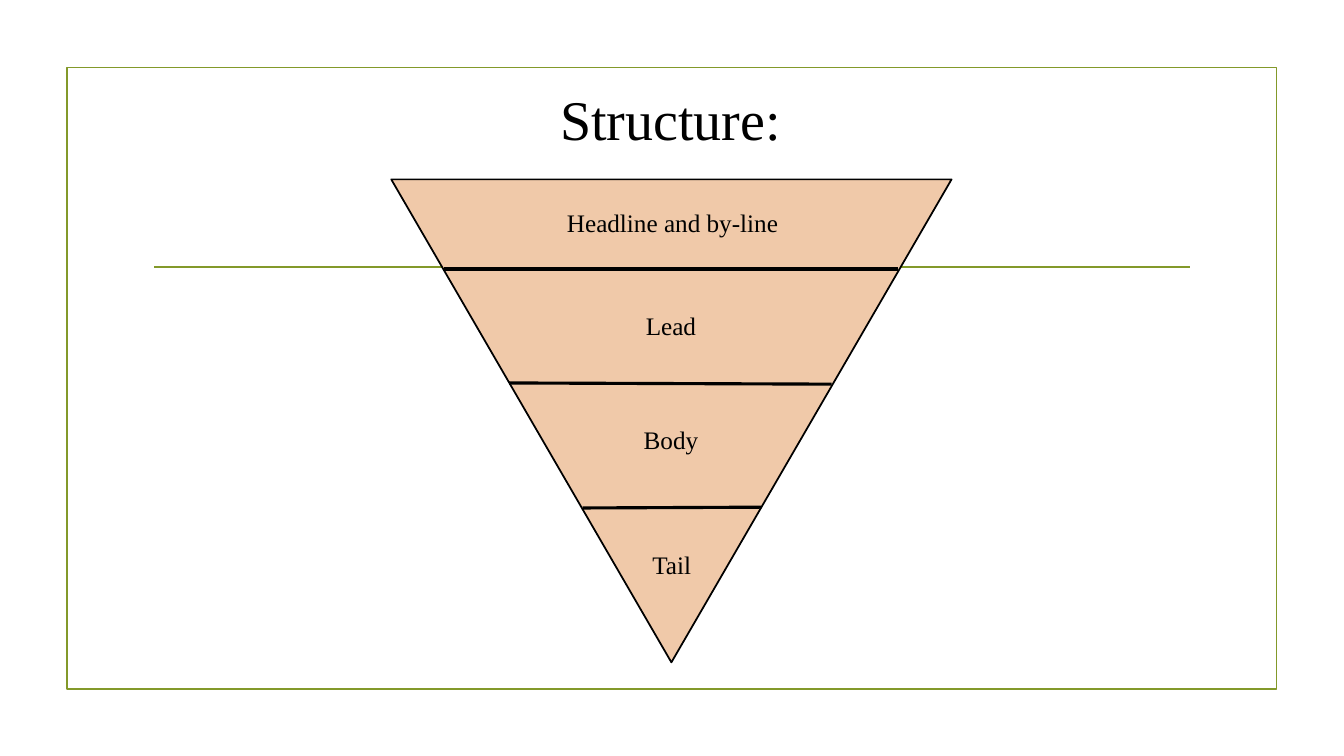
"""Build a slide showing the inverted pyramid structure of a news story."""
from lxml.etree import SubElement
from pptx import Presentation
from pptx.dml.color import RGBColor
from pptx.enum.shapes import MSO_CONNECTOR as Connector, MSO_SHAPE as Shape
from pptx.enum.text import MSO_AUTO_SIZE as AutoSize, PP_ALIGN as Align
from pptx.oxml.ns import qn
from pptx.util import Cm, Pt

COLORS = {"frame": "83992A", "pyramid": "F0C9A9", "ink": "000000"}
LABELS = [
    ("Headline and by-line", 12.34, 5.11),
    ("Lead", 12.3, 7.7),
    ("Body", 12.3, 10.57),
    ("Tail", 12.32, 13.72),
]
DIVIDERS = [
    (11.2, 6.78, 22.63, 6.78),
    (12.83, 9.65, 20.96, 9.68),
    (14.68, 12.8, 19.18, 12.78),
]


def color(name):
    return RGBColor.from_string(COLORS[name])


def add_outline(page, kind, left, top, width, height, line, fill=None, rotation=0):
    shape = page.shapes.add_shape(kind, Cm(left), Cm(top), Cm(width), Cm(height))
    shape.shadow.inherit = False
    shape.rotation = rotation
    if fill:
        shape.fill.solid()
        shape.fill.fore_color.rgb = color(fill)
    else:
        shape.fill.background()
    shape.line.color.rgb = color(line)
    shape.line.width = Pt(1.25)


def add_line(page, start_x, start_y, end_x, end_y, line, weight):
    connector = page.shapes.add_connector(
        Connector.STRAIGHT, Cm(start_x), Cm(start_y), Cm(end_x), Cm(end_y))
    connector.line.color.rgb = color(line)
    connector.line.width = Pt(weight)
    SubElement(connector.line._get_or_add_ln().getparent(), qn("a:effectLst"))


def add_text(page, text, *, left, top, width, height, size):
    box = page.shapes.add_textbox(Cm(left), Cm(top), Cm(width), Cm(height))
    frame = box.text_frame
    frame.word_wrap = True
    frame.auto_size = AutoSize.SHAPE_TO_FIT_TEXT
    para = frame.paragraphs[0]
    para.alignment = Align.CENTER
    span = para.add_run()
    span.text = text
    span.font.name = "Times New Roman"
    span.font.size = Pt(size)
    span.font.color.rgb = color("ink")


def main():
    deck = Presentation()
    deck.slide_width, deck.slide_height = Cm(33.87), Cm(19.05)
    page = deck.slides.add_slide(deck.slide_layouts[6])

    add_outline(page, Shape.RECTANGLE, 1.69, 1.7, 30.48, 15.67, "frame")
    add_line(page, 3.89, 6.73, 30, 6.73, "frame", 1.25)
    add_outline(page, Shape.ISOSCELES_TRIANGLE, 9.86, 4.52, 14.12, 12.17,
                "ink", fill="pyramid", rotation=180)
    for label, left, top in LABELS:
        add_text(page, label, left=left, top=top, width=9.22, height=1.02, size=18)
    for divider in DIVIDERS:
        add_line(page, *divider, "ink", 2.25)
    add_text(page, "Structure:", left=5.94, top=2.01, width=21.92, height=1.96, size=40)

    deck.save("out.pptx")


if __name__ == "__main__":
    main()
